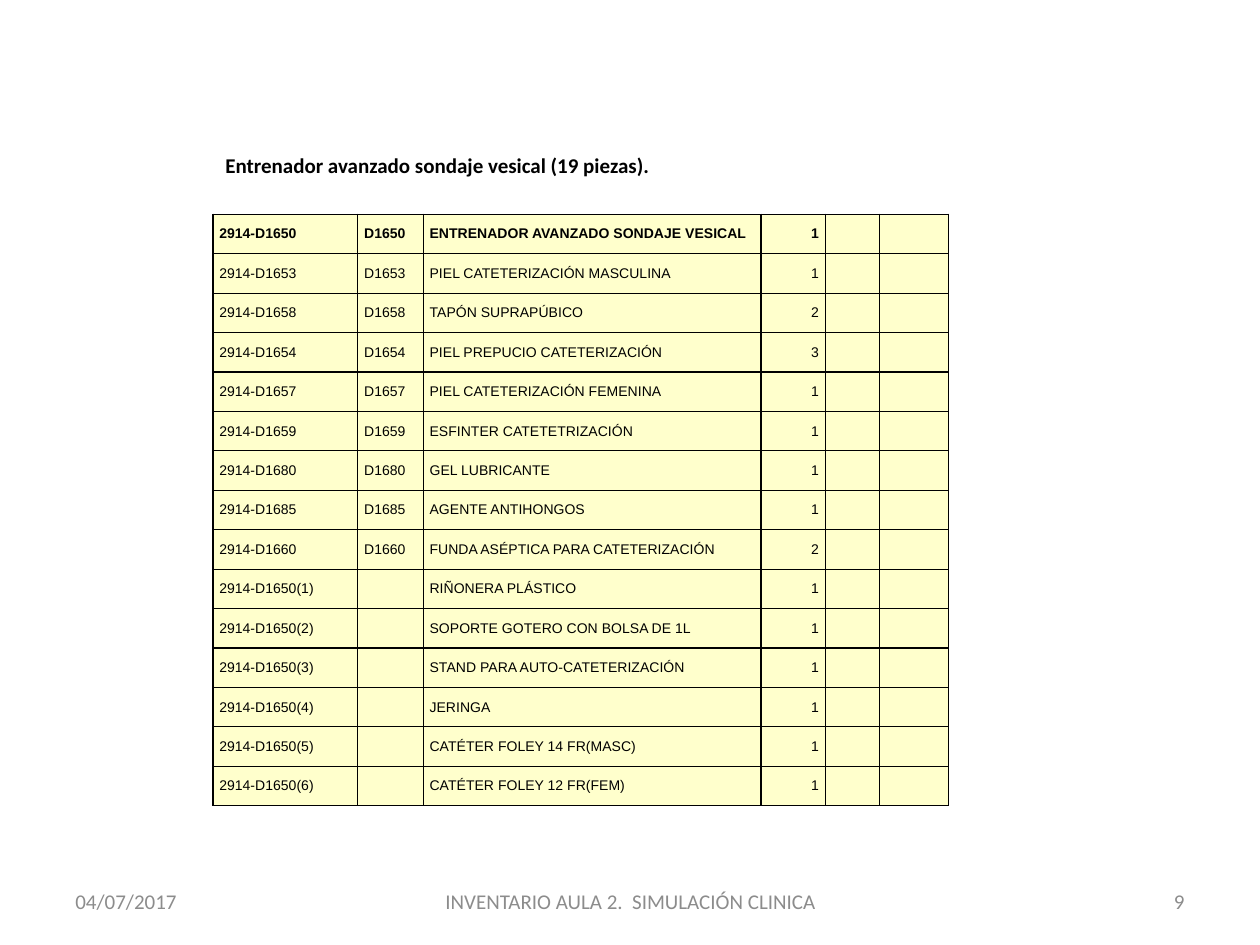
from lxml import etree
from pptx import Presentation
from pptx import util as u
from pptx.dml.color import RGBColor
from pptx.enum import text
from pptx.oxml import ns

LEFT, MID, RIGHT = text.PP_ALIGN.LEFT, text.PP_ALIGN.CENTER, text.PP_ALIGN.RIGHT
BLACK, GREY, CREAM = "000000", "8C8C8C", "FFFFCC"


def style(para, face, size, ink, bold=False, align=LEFT):
    para.alignment = align
    font = para.font
    font.name, font.size, font.bold = face, u.Pt(size), bold
    font.color.rgb = RGBColor.from_string(ink)


def outline(cell):
    """Draw a thin black line on all four sides of a table cell."""
    props = cell._tc.get_or_add_tcPr()
    for i, side in enumerate(("lnL", "lnR", "lnT", "lnB")):
        line = etree.Element(ns.qn(f"a:{side}"), w=str(u.Pt(0.75)))
        fill = etree.SubElement(line, ns.qn("a:solidFill"))
        etree.SubElement(fill, ns.qn("a:srgbClr"), val=BLACK)
        props.insert(i, line)


deck = Presentation()
deck.slide_width, deck.slide_height = u.Inches(10), u.Inches(7.5)
slide = deck.slides.add_slide(deck.slide_layouts[6])

# Footer and heading
top, middle = text.MSO_ANCHOR.TOP, text.MSO_ANCHOR.MIDDLE
labels = [
    ("04/07/2017", (0.5, 6.95, 2.33, 0.4), GREY, LEFT, middle),
    ("INVENTARIO AULA 2.  SIMULACIÓN CLINICA", (3.42, 6.95, 3.17, 0.4), GREY, MID, middle),
    ("9", (7.17, 6.95, 2.33, 0.4), GREY, RIGHT, middle),
    ("Entrenador avanzado sondaje vesical (19 piezas).", (1.69, 1.16, 5.91, 0.3), BLACK, LEFT, top),
]
for words, place, ink, align, anchor in labels:
    frame = slide.shapes.add_textbox(*map(u.Inches, place)).text_frame
    frame.word_wrap, frame.vertical_anchor = True, anchor
    frame.text = words
    style(frame.paragraphs[0], "Calibri", 12, ink, ink == BLACK, align)

# Inventory: code, part name, count
parts = [
    ("D1650", "ENTRENADOR AVANZADO SONDAJE VESICAL", 1),
    ("D1653", "PIEL CATETERIZACIÓN MASCULINA", 1),
    ("D1658", "TAPÓN SUPRAPÚBICO", 2),
    ("D1654", "PIEL PREPUCIO CATETERIZACIÓN", 3),
    ("D1657", "PIEL CATETERIZACIÓN FEMENINA", 1),
    ("D1659", "ESFINTER CATETETRIZACIÓN", 1),
    ("D1680", "GEL LUBRICANTE", 1),
    ("D1685", "AGENTE ANTIHONGOS", 1),
    ("D1660", "FUNDA ASÉPTICA PARA CATETERIZACIÓN", 2),
    ("D1650(1)", "RIÑONERA PLÁSTICO", 1),
    ("D1650(2)", "SOPORTE GOTERO CON BOLSA DE 1L", 1),
    ("D1650(3)", "STAND PARA AUTO-CATETERIZACIÓN", 1),
    ("D1650(4)", "JERINGA", 1),
    ("D1650(5)", "CATÉTER FOLEY 14 FR(MASC)", 1),
    ("D1650(6)", "CATÉTER FOLEY 12 FR(FEM)", 1),
]
widths = [1.15, 0.52, 2.68, 0.51, 0.43, 0.55]
place = map(u.Inches, (1.69, 1.7, sum(widths), 4.7))
table = slide.shapes.add_table(len(parts), len(widths), *place).table
table.first_row = table.horz_banding = False
for col, width in zip(table.columns, widths):
    col.width = u.Inches(width)

for r, (code, name, count) in enumerate(parts):
    short = "" if "(" in code else code
    for c, words in enumerate((f"2914-{code}", short, name, str(count), "", "")):
        cell = table.cell(r, c)
        cell.text = words
        cell.vertical_anchor = middle
        cell.margin_left = cell.margin_right = u.Inches(0.05)
        cell.margin_top = cell.margin_bottom = u.Inches(0.02)
        cell.fill.solid()
        cell.fill.fore_color.rgb = RGBColor.from_string(CREAM)
        outline(cell)
        style(cell.text_frame.paragraphs[0], "Arial", 8, BLACK, r == 0, RIGHT if c == 3 else LEFT)

deck.save("out.pptx")
